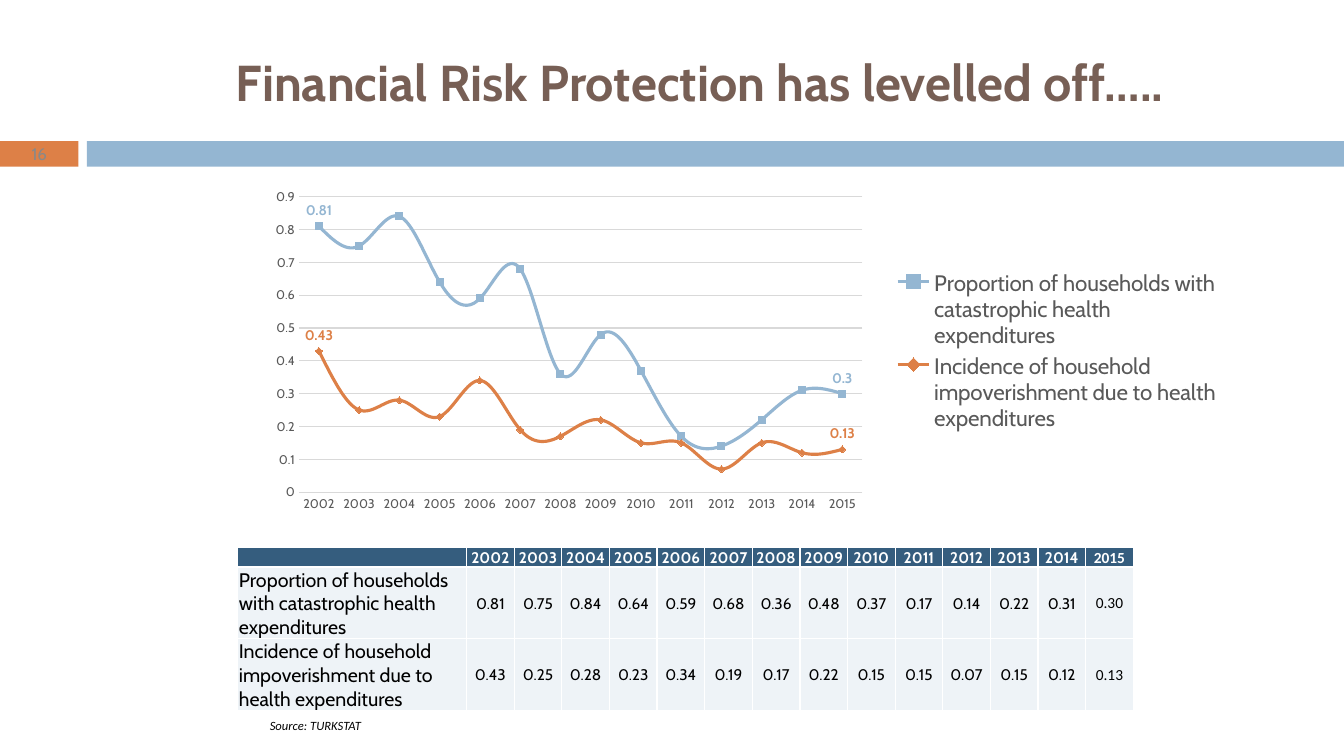
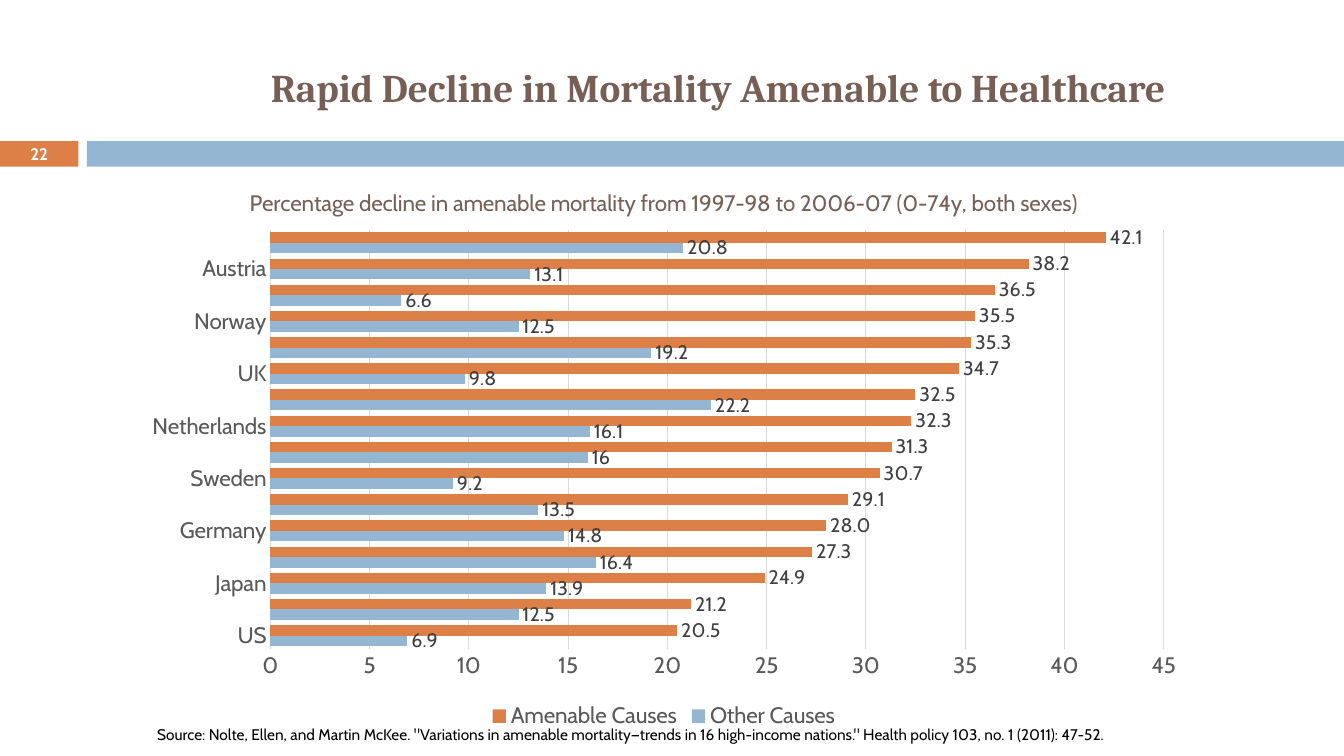
from dataclasses import dataclass

from lxml import etree
from pptx import Presentation
from pptx.chart.data import CategoryChartData
from pptx.dml.color import RGBColor
from pptx.enum.chart import XL_CHART_TYPE, XL_LABEL_POSITION, XL_LEGEND_POSITION, XL_TICK_MARK
from pptx.enum.shapes import MSO_SHAPE
from pptx.enum.text import MSO_ANCHOR, MSO_AUTO_SIZE, PP_ALIGN
from pptx.oxml.ns import qn
from pptx.util import Cm, Pt

LINE_CHART = XL_CHART_TYPE.LINE
BAR_CHART = XL_CHART_TYPE.BAR_CLUSTERED
ABOVE = XL_LABEL_POSITION.ABOVE
OUTSIDE_END = XL_LABEL_POSITION.OUTSIDE_END
LEGEND_RIGHT = XL_LEGEND_POSITION.RIGHT
LEGEND_BOTTOM = XL_LEGEND_POSITION.BOTTOM
NO_TICK = XL_TICK_MARK.NONE
RECTANGLE = MSO_SHAPE.RECTANGLE
MIDDLE = MSO_ANCHOR.MIDDLE
BOTTOM = MSO_ANCHOR.BOTTOM
FIXED_SIZE = MSO_AUTO_SIZE.NONE
CENTER = PP_ALIGN.CENTER
LEFT = PP_ALIGN.LEFT

COLORS = {
    "orange": "DD8047",
    "blue": "94B6D2",
    "brown": "775F55",
    "navy": "355D7E",
    "pale": "EEF3F7",
    "white": "FFFFFF",
    "black": "000000",
    "axis": "595959",
    "grid": "D9D9D9",
    "label": "404040",
    "muted": "898989",
}
BODY_FONT = "Cabin"
TITLE_ONLY = 5


@dataclass(frozen=True)
class Box:
    left: float
    top: float
    width: float
    height: float

    def lengths(self) -> tuple:
        return Cm(self.left), Cm(self.top), Cm(self.width), Cm(self.height)


@dataclass(frozen=True)
class Style:
    size: float
    color: str
    face: str = BODY_FONT
    bold: bool = False
    italic: bool = False


@dataclass(frozen=True)
class Heading:
    text: str
    box: Box
    style: Style
    spacing: float


@dataclass(frozen=True)
class Measure:
    name: str
    values: tuple
    color: str
    number_format: str = "General"


@dataclass(frozen=True)
class ChartPlan:
    kind: int
    box: Box
    plot: Box
    categories: tuple
    measures: tuple
    axis_size: float
    maximum: float
    step: float
    legend: int


NUMBER_BAND = Box(0, 3.56, 1.98, 0.64)
WIDE_BAND = Box(2.19, 3.56, 31.68, 0.64)

YEARS = tuple(str(year) for year in range(2002, 2016))
CATASTROPHIC = Measure(
    "Proportion of households with catastrophic health expenditures",
    (0.81, 0.75, 0.84, 0.64, 0.59, 0.68, 0.36, 0.48, 0.37, 0.17, 0.14, 0.22, 0.31, 0.3),
    "blue",
)
IMPOVERISHMENT = Measure(
    "Incidence of household impoverishment due to health expenditures",
    (0.43, 0.25, 0.28, 0.23, 0.34, 0.19, 0.17, 0.22, 0.15, 0.15, 0.07, 0.15, 0.12, 0.13),
    "orange",
)
PROTECTION = ChartPlan(
    LINE_CHART, Box(6.55, 4.62, 24.49, 8.46), Box(0.04, 0.04, 0.58, 0.88),
    YEARS, (CATASTROPHIC, IMPOVERISHMENT), 9, 0.9, 0.1, LEGEND_RIGHT,
)

COUNTRIES = (
    "US", "Greece", "Japan", "France", "Germany", "Denmark", "Sweden", "New Zealand",
    "Netherlands", "Italy", "UK", "Australia", "Norway", "Finland", "Austria", "Ireland",
)
OTHER_CAUSES = Measure(
    "Other Causes",
    (6.9, 12.5, 13.9, 16.4, 14.8, 13.5, 9.2, 16, 16.1, 22.2, 9.8, 19.2, 12.5, 6.6, 13.1, 20.8),
    "blue",
)
AMENABLE_CAUSES = Measure(
    "Amenable Causes",
    (20.5, 21.2, 24.9, 27.3, 28, 29.1, 30.7, 31.3, 32.3, 32.5, 34.7, 35.3, 35.5, 36.5, 38.2, 42.1),
    "orange", "0.0",
)
MORTALITY = ChartPlan(
    BAR_CHART, Box(3.33, 4.22, 26.8, 14.27), Box(0.13, 0.11, 0.84, 0.74),
    COUNTRIES, (OTHER_CAUSES, AMENABLE_CAUSES), 16, 45, 5, LEGEND_BOTTOM,
)


def rgb(color: str) -> RGBColor:
    return RGBColor.from_string(COLORS[color])


def apply_style(font, style: Style) -> None:
    font.name = style.face
    font.size = Pt(style.size)
    font.bold = style.bold
    font.italic = style.italic
    font.color.rgb = rgb(style.color)


def write(paragraph, text: str, style: Style, alignment=LEFT) -> None:
    paragraph.alignment = alignment
    run = paragraph.add_run()
    run.text = text
    apply_style(run.font, style)


def add_band(slide, box: Box, color: str):
    band = slide.shapes.add_shape(RECTANGLE, *box.lengths())
    band.shadow.inherit = False
    band.fill.solid()
    band.fill.fore_color.rgb = rgb(color)
    band.line.fill.background()
    return band


def start_slide(deck, heading: Heading, number: str, number_style: Style):
    slide = deck.slides.add_slide(deck.slide_layouts[TITLE_ONLY])
    title = slide.shapes.title
    title.left, title.top, title.width, title.height = heading.box.lengths()
    frame = title.text_frame
    frame.auto_size = FIXED_SIZE
    frame.vertical_anchor = MIDDLE
    frame.paragraphs[0].line_spacing = heading.spacing
    write(frame.paragraphs[0], heading.text, heading.style, CENTER)

    add_band(slide, WIDE_BAND, "blue")
    label = add_band(slide, NUMBER_BAND, "orange").text_frame
    label.margin_top = label.margin_bottom = 0
    label.vertical_anchor = MIDDLE
    write(label.paragraphs[0], number, number_style, CENTER)
    return slide


def add_source(slide, text: str, box: Box, style: Style) -> None:
    frame = slide.shapes.add_textbox(*box.lengths()).text_frame
    frame.word_wrap = True
    write(frame.paragraphs[0], text, style)


def place_plot(chart, plot: Box) -> None:
    area = chart.element.find(".//" + qn("c:plotArea"))
    for previous in area.findall(qn("c:layout")):
        area.remove(previous)
    layout = etree.Element(qn("c:layout"))
    manual = etree.SubElement(layout, qn("c:manualLayout"))
    settings = (
        ("layoutTarget", "inner"), ("xMode", "edge"), ("yMode", "edge"),
        ("x", plot.left), ("y", plot.top), ("w", plot.width), ("h", plot.height),
    )
    for tag, value in settings:
        etree.SubElement(manual, qn(f"c:{tag}"), val=str(value))
    area.insert(0, layout)


def add_chart(slide, plan: ChartPlan):
    data = CategoryChartData()
    data.categories = plan.categories
    for measure in plan.measures:
        data.add_series(measure.name, measure.values)
    chart = slide.shapes.add_chart(plan.kind, *plan.box.lengths(), data).chart
    apply_style(chart.font, Style(plan.axis_size, "black"))
    chart.has_title = False
    chart.has_legend = True
    chart.legend.position = plan.legend
    chart.legend.include_in_layout = False
    apply_style(chart.legend.font, Style(16, "axis"))
    chart.plots[0].vary_by_categories = False

    values = chart.value_axis
    for axis in (chart.category_axis, values):
        axis.major_tick_mark = axis.minor_tick_mark = NO_TICK
        apply_style(axis.tick_labels.font, Style(plan.axis_size, "axis"))
    values.minimum_scale = 0
    values.maximum_scale = plan.maximum
    values.major_unit = plan.step
    values.tick_labels.number_format = "General"
    values.tick_labels.number_format_is_linked = False
    values.format.line.fill.background()
    for line in (chart.category_axis.format.line, values.major_gridlines.format.line):
        line.color.rgb = rgb("grid")
        line.width = Pt(0.75)
    place_plot(chart, plan.plot)
    return chart


def add_protection_chart(slide) -> None:
    chart = add_chart(slide, PROTECTION)
    for series, measure in zip(chart.plots[0].series, PROTECTION.measures):
        series.smooth = True
        series.marker.style = None
        series.format.line.color.rgb = rgb(measure.color)
        series.format.line.width = Pt(2.25)
        for end in (0, len(YEARS) - 1):
            label = series.points[end].data_label
            apply_style(label.font, Style(10, measure.color, bold=True))
            label.position = ABOVE


def add_mortality_chart(slide) -> None:
    chart = add_chart(slide, MORTALITY)
    chart.has_title = True
    write(
        chart.chart_title.text_frame.paragraphs[0],
        "Percentage decline in amenable mortality from 1997-98 to 2006-07 (0-74y, both sexes)",
        Style(16, "brown"), CENTER,
    )
    chart.plots[0].gap_width = 50
    chart.plots[0].overlap = 0
    for series, measure in zip(chart.plots[0].series, MORTALITY.measures):
        series.format.fill.solid()
        series.format.fill.fore_color.rgb = rgb(measure.color)
        labels = series.data_labels
        labels.show_value = True
        labels.position = OUTSIDE_END
        labels.number_format = measure.number_format
        labels.number_format_is_linked = False
        apply_style(labels.font, Style(14, "label"))


def fill_cell(cell, text: str, style: Style, fill: str, alignment, anchor) -> None:
    properties = cell._tc.get_or_add_tcPr()
    for side in ("lnL", "lnR", "lnT", "lnB"):
        border = etree.SubElement(properties, qn(f"a:{side}"), w=str(Pt(1)))
        solid = etree.SubElement(border, qn("a:solidFill"))
        etree.SubElement(solid, qn("a:srgbClr"), val=COLORS["white"])
    cell.fill.solid()
    cell.fill.fore_color.rgb = rgb(fill)
    cell.margin_left = cell.margin_right = cell.margin_top = Cm(0.03)
    cell.margin_bottom = 0
    cell.vertical_anchor = anchor
    paragraph = cell.text_frame.paragraphs[0]
    if text:
        write(paragraph, text, style, alignment)
    else:
        etree.SubElement(paragraph._p, qn("a:endParaRPr"), sz=str(style.size * 100))


def add_protection_table(slide) -> None:
    rows = [("", *YEARS)]
    for measure in PROTECTION.measures:
        rows.append((measure.name, *(f"{value:.2f}" for value in measure.values)))
    name_width, year_width = 5.77, 1.2
    heights = (0.48, 1.8, 1.8)
    box = Box(5.99, 13.79, name_width + year_width * len(YEARS), sum(heights))
    table = slide.shapes.add_table(len(rows), len(rows[0]), *box.lengths()).table
    for index, column in enumerate(table.columns):
        column.width = Cm(year_width if index else name_width)
    for row_index, texts in enumerate(rows):
        table.rows[row_index].height = Cm(heights[row_index])
        header = row_index == 0
        for index, text in enumerate(texts):
            is_name = index == 0 and not header
            face = "Calibri" if index == len(YEARS) else BODY_FONT
            style = Style(14 if is_name else 11, "white" if header else "black", face, header)
            fill_cell(
                table.cell(row_index, index), text, style, "navy" if header else "pale",
                LEFT if is_name else CENTER, BOTTOM if is_name else MIDDLE,
            )


def main() -> None:
    deck = Presentation()
    deck.slide_width, deck.slide_height = Cm(33.87), Cm(19.05)

    protection = start_slide(
        deck,
        Heading("Financial Risk Protection has levelled off…..", Box(4.24, 1.07, 26.8, 1.88),
                Style(36, "brown", bold=True), 1.05),
        "16", Style(12, "muted"),
    )
    add_source(protection, "Source: TURKSTAT", Box(6.55, 17.96, 8.23, 0.64),
               Style(9, "black", "Calibri", italic=True))
    add_protection_table(protection)
    add_protection_chart(protection)

    mortality = start_slide(
        deck,
        Heading("Rapid Decline in Mortality Amenable to Healthcare", Box(6.07, 1.35, 24.05, 1.83),
                Style(28, "brown", "Cambria", bold=True), 0.9),
        "22", Style(12, "white", bold=True),
    )
    add_source(
        mortality,
        'Source: Nolte, Ellen, and Martin McKee. "Variations in amenable mortality—trends in 16 '
        'high-income nations." Health policy 103, no. 1 (2011): 47-52.',
        Box(3.71, 18.14, 28.42, 0.74), Style(11, "black"),
    )
    add_mortality_chart(mortality)
    deck.save("out.pptx")


if __name__ == "__main__":
    main()
